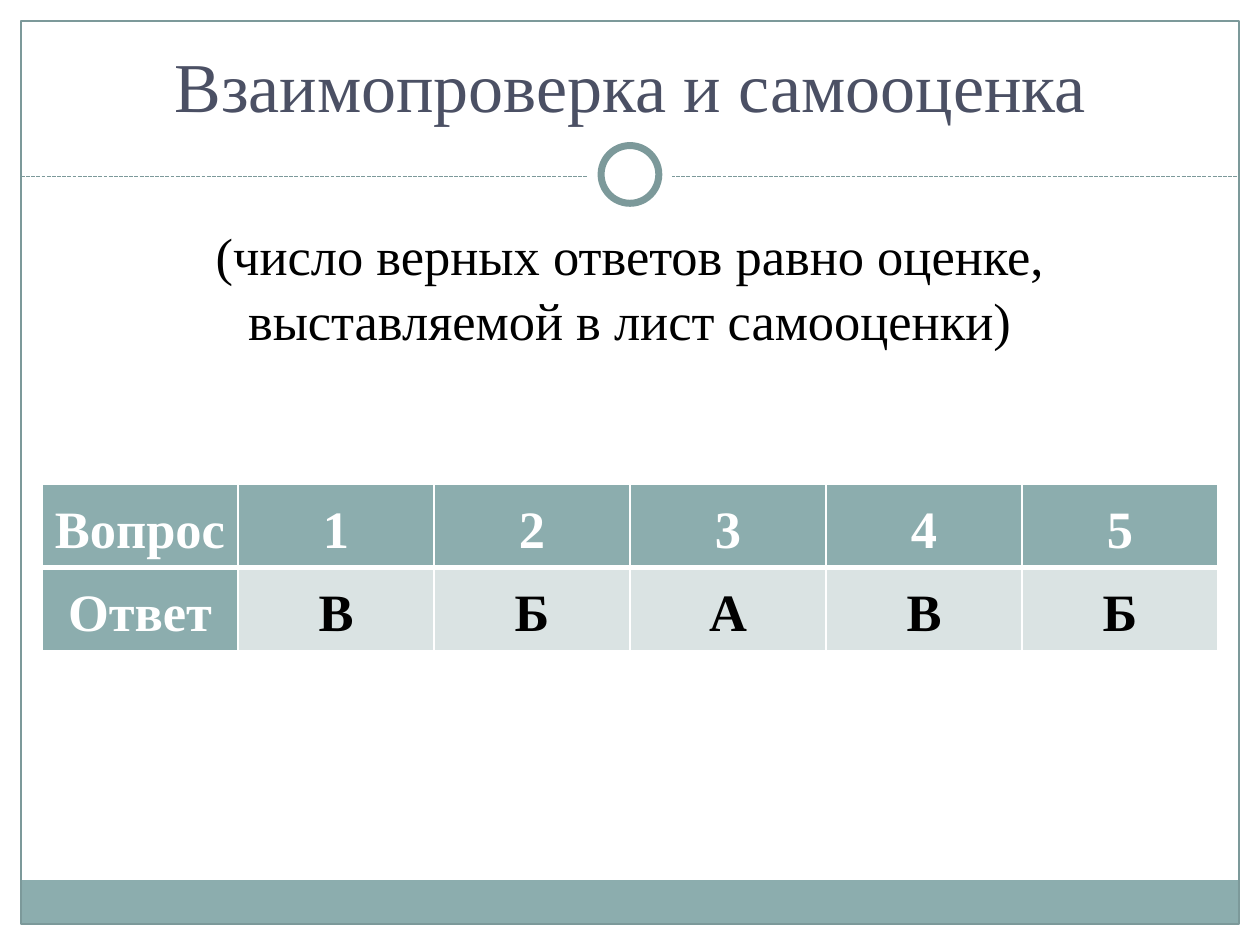
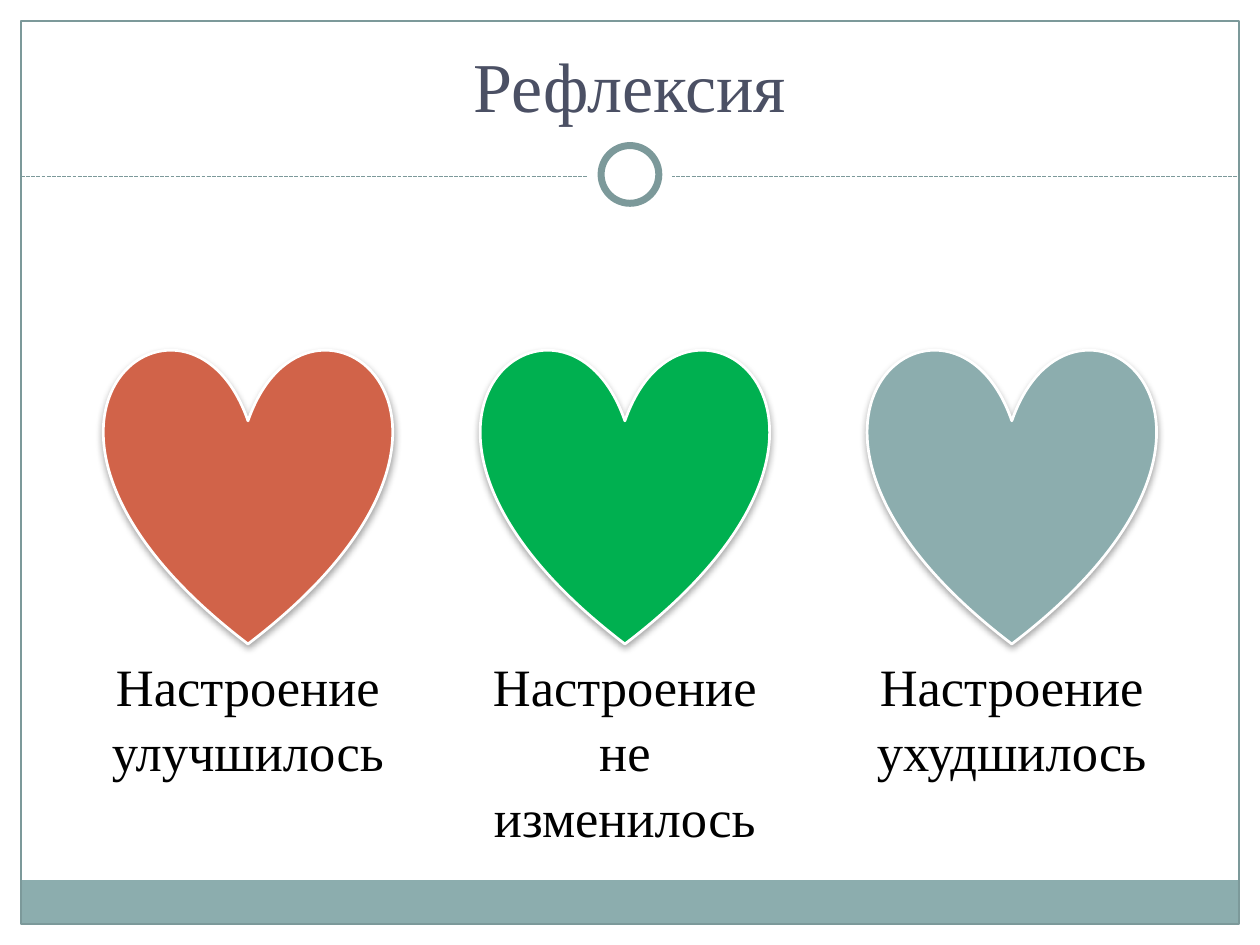
from pptx import Presentation
from pptx.dml.color import RGBColor
from pptx.enum.dml import MSO_LINE
from pptx.enum.shapes import MSO_CONNECTOR, MSO_SHAPE
from pptx.enum.text import MSO_ANCHOR, PP_ALIGN
from pptx.oxml.ns import qn
from pptx.util import Pt
from lxml.etree import SubElement

# Content
CHECK_TITLE = "Взаимопроверка и самооценка"
CHECK_NOTE = "(число верных ответов равно оценке, выставляемой в лист самооценки)"
ANSWER_ROWS = [
    ["Вопрос", "1", "2", "3", "4", "5"],
    ["Ответ", "В", "Б", "А", "В", "Б"],
]
MOOD_TITLE = "Рефлексия"

# Colours
WHITE = RGBColor(0xFF, 0xFF, 0xFF)
BLACK = RGBColor(0, 0, 0)
SLATE = RGBColor(0x4B, 0x50, 0x64)
TEAL = RGBColor(0x8C, 0xAD, 0xAE)
DARK_TEAL = RGBColor(0x7C, 0x99, 0x9A)
PALE_TEAL = RGBColor(0xDA, 0xE3, 0xE3)
RED = RGBColor(0xD1, 0x63, 0x49)
GREEN = RGBColor(0x00, 0xB0, 0x50)

# Each mood: caption, heart colour, horizontal centre, caption height
MOODS = [
    ("Настроение улучшилось", RED, 141.7, 85),
    ("Настроение не изменилось", GREEN, 357.1, 122.4),
    ("Настроение ухудшилось", TEAL, 578.2, 85),
]

# Layout and formats
WIDTH, HEIGHT = 720, 540
MARGIN = 12
RULE_TOP = 101
RING_CENTRE = 99.7
HEART_TOP, HEART_WIDTH, HEART_HEIGHT = 198, 164.2, 170
CAPTION_WIDTH = 184.3
ROW_HEIGHT = 45.7
FONT = "Times New Roman"
TITLE_FONT = {"name": FONT, "size": Pt(40), "bold": False}
BODY_FONT = {"name": FONT, "size": Pt(30), "bold": False}
TABLE_FONT = {"name": FONT, "size": Pt(30), "bold": True}
TITLE_PARAGRAPH = {"alignment": PP_ALIGN.CENTER}
BODY_PARAGRAPH = {"alignment": PP_ALIGN.CENTER, "space_before": Pt(4), "line_spacing": 1.04}
TABLE_PARAGRAPH = {"alignment": PP_ALIGN.CENTER, "line_spacing": 1.15}
CELL_FORMAT = {
    "vertical_anchor": MSO_ANCHOR.MIDDLE,
    "margin_left": Pt(3.6), "margin_right": Pt(3.6),
    "margin_top": Pt(3), "margin_bottom": Pt(3),
}


def set_all(target, values):
    for name, value in values.items():
        setattr(target, name, value)


def points(*lengths):
    return [Pt(length) for length in lengths]


def write(text_frame, text, font, paragraph_format, colour):
    paragraph = text_frame.paragraphs[0]
    set_all(paragraph, paragraph_format)
    run = paragraph.add_run()
    run.text = text
    set_all(run.font, font)
    run.font.color.rgb = colour


def add_text(slide, box, text, font, paragraph_format, colour, anchor=MSO_ANCHOR.TOP):
    text_frame = slide.shapes.add_textbox(*points(*box)).text_frame
    set_all(text_frame, {"word_wrap": True, "vertical_anchor": anchor})
    write(text_frame, text, font, paragraph_format, colour)


def add_figure(slide, kind, box, fill=None, line=None, line_width=0.75):
    shape = slide.shapes.add_shape(kind, *points(*box))
    shape.shadow.inherit = False
    if fill is None:
        shape.fill.background()
    else:
        shape.fill.solid()
        shape.fill.fore_color.rgb = fill
    if line is None:
        shape.line.fill.background()
    else:
        shape.line.color.rgb = line
        shape.line.width = Pt(line_width)
    return shape


def add_circle(slide, diameter, **style):
    left, top = (WIDTH - diameter) / 2, RING_CENTRE - diameter / 2
    add_figure(slide, MSO_SHAPE.OVAL, (left, top, diameter, diameter), **style)


def add_shadow(shape):
    effects = shape._element.spPr.find(qn("a:effectLst"))
    shadow = SubElement(effects, qn("a:outerShdw"), blurRad=str(Pt(4)), dist=str(Pt(2)),
                        dir="5400000", rotWithShape="0")
    colour = SubElement(shadow, qn("a:srgbClr"), val=str(BLACK))
    SubElement(colour, qn("a:alpha"), val="35000")


def add_cell_borders(cell, bottom_width):
    properties = cell._tc.get_or_add_tcPr()
    widths = {"a:lnL": 1, "a:lnR": 1, "a:lnT": 1, "a:lnB": bottom_width}
    for position, (side, width) in enumerate(widths.items()):
        border = SubElement(properties, qn(side), w=str(Pt(width)))
        fill = SubElement(border, qn("a:solidFill"))
        SubElement(fill, qn("a:srgbClr"), val=str(WHITE))
        properties.insert(position, border)


def add_framed_slide(presentation, title):
    slide = presentation.slides.add_slide(presentation.slide_layouts[6])
    inner_width = WIDTH - 2 * MARGIN
    # Bottom band and page frame
    add_figure(slide, MSO_SHAPE.RECTANGLE, (MARGIN, 503, inner_width, 25), fill=TEAL)
    add_figure(slide, MSO_SHAPE.RECTANGLE, (MARGIN, MARGIN, inner_width, HEIGHT - 2 * MARGIN),
               line=DARK_TEAL)
    # Dashed rule broken by a ring
    rule = slide.shapes.add_connector(
        MSO_CONNECTOR.STRAIGHT, *points(MARGIN, RULE_TOP, WIDTH - MARGIN, RULE_TOP))
    rule.line.color.rgb = DARK_TEAL
    set_all(rule.line, {"width": Pt(0.75), "dash_style": MSO_LINE.SQUARE_DOT})
    SubElement(rule._element.spPr, qn("a:effectLst"))
    add_circle(slide, 48, fill=WHITE)
    add_circle(slide, 33, fill=WHITE, line=DARK_TEAL, line_width=4)
    # Title
    add_text(slide, (24, 18, 672, 60), title, TITLE_FONT, TITLE_PARAGRAPH, SLATE,
             MSO_ANCHOR.MIDDLE)
    return slide


def add_answer_table(slide, rows):
    box = points(24, 277, 672, ROW_HEIGHT * len(rows))
    table = slide.shapes.add_table(len(rows), len(rows[0]), *box).table
    for row_index, row in enumerate(rows):
        table.rows[row_index].height = Pt(ROW_HEIGHT)
        for column_index, text in enumerate(row):
            is_header = row_index == 0 or column_index == 0
            cell = table.cell(row_index, column_index)
            set_all(cell, CELL_FORMAT)
            cell.fill.solid()
            cell.fill.fore_color.rgb = TEAL if is_header else PALE_TEAL
            write(cell.text_frame, text, TABLE_FONT, TABLE_PARAGRAPH,
                  WHITE if is_header else BLACK)
            add_cell_borders(cell, 3 if row_index == 0 else 1)


def add_mood(slide, caption, colour, centre, caption_height):
    heart = add_figure(
        slide, MSO_SHAPE.HEART,
        (centre - HEART_WIDTH / 2, HEART_TOP, HEART_WIDTH, HEART_HEIGHT),
        fill=colour, line=WHITE, line_width=1.57)
    add_shadow(heart)
    caption_box = (centre - CAPTION_WIDTH / 2, HEART_TOP + HEART_HEIGHT + 0.6,
                   CAPTION_WIDTH, caption_height)
    add_text(slide, caption_box, caption, BODY_FONT, BODY_PARAGRAPH, BLACK)


def main():
    presentation = Presentation()
    set_all(presentation, {"slide_width": Pt(WIDTH), "slide_height": Pt(HEIGHT)})

    # Peer check and self-assessment
    check_slide = add_framed_slide(presentation, CHECK_TITLE)
    add_text(check_slide, (25.2, 122.4, 669.6, 360), CHECK_NOTE, BODY_FONT,
             BODY_PARAGRAPH, BLACK)
    add_answer_table(check_slide, ANSWER_ROWS)

    # Mood hearts
    mood_slide = add_framed_slide(presentation, MOOD_TITLE)
    for mood in MOODS:
        add_mood(mood_slide, *mood)

    presentation.save("out.pptx")


if __name__ == "__main__":
    main()
